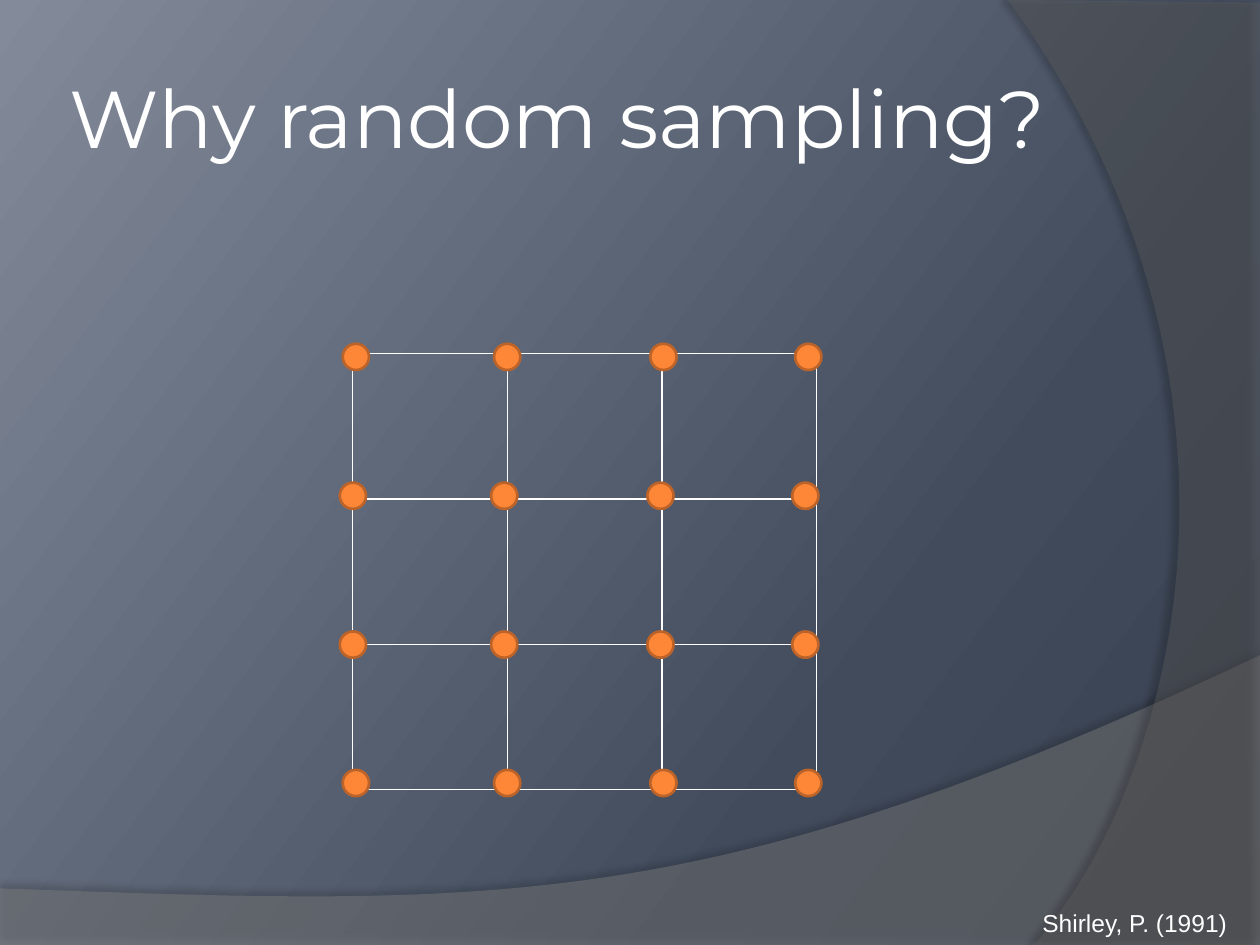
import copy

import lxml.etree
import pptx
import pptx.dml.color
import pptx.enum.shapes
import pptx.enum.text
import pptx.oxml.ns
import pptx.util

Cm = pptx.util.Cm
Pt = pptx.util.Pt
qn = pptx.oxml.ns.qn

COLORS = {
    "night": "373F4D",
    "slate": "414B5C",
    "mist": "838B9A",
    "lower_wave": "7F7F7F",
    "right_wave": "5E5E5E",
    "shadow": "000000",
    "white": "FFFFFF",
    "sample": "FE8637",
    "sample_edge": "BC6329",
}
WIDTH, HEIGHT = 25.4, 19.05


def rgb(name):
    return pptx.dml.color.RGBColor.from_string(COLORS[name])


def add_color(parent, name, opacity=100):
    color = lxml.etree.SubElement(parent, qn("a:srgbClr"), val=COLORS[name])
    if opacity < 100:
        lxml.etree.SubElement(color, qn("a:alpha"), val=str(opacity * 1000))


def write_text(frame, text, size, font, color="white", align="LEFT", anchor="TOP", inset=None):
    frame.word_wrap = True
    frame.auto_size = pptx.enum.text.MSO_AUTO_SIZE.NONE
    frame.vertical_anchor = getattr(pptx.enum.text.MSO_ANCHOR, anchor)
    if inset is not None:
        frame.margin_left = frame.margin_right = Cm(inset)
        frame.margin_top = frame.margin_bottom = Cm(inset)
    paragraph = frame.paragraphs[0]
    paragraph.alignment = getattr(pptx.enum.text.PP_ALIGN, align)
    run = paragraph.add_run()
    run.text = text
    run.font.size = Pt(size)
    run.font.name = font
    run.font.color.rgb = rgb(color)


def paint_background(slide):
    fill = slide.background.fill
    fill.gradient()
    fill.gradient_angle = 143
    first = slide.element.find(".//" + qn("a:gs"))
    first.addnext(copy.deepcopy(first))
    stops = zip(fill.gradient_stops, (0, 0.3, 1), ("night", "slate", "mist"))
    for stop, position, color in stops:
        stop.position = position
        stop.color.rgb = rgb(color)


def bezier(start, control_1, control_2, end, steps=48):
    points = []
    for step in range(1, steps + 1):
        t = step / steps
        weights = ((1 - t) ** 3, 3 * t * (1 - t) ** 2, 3 * t * t * (1 - t), t**3)
        corners = (start, control_1, control_2, end)
        points.append(tuple(sum(w * c[axis] for w, c in zip(weights, corners)) for axis in (0, 1)))
    return points


def add_wave(slide, box, corners, curve, color, opacity, shadow_opacity, distance, direction):
    left, top = box
    outline = corners + bezier(corners[-1], *curve)
    points = [(Cm(left + x), Cm(top + y)) for x, y in outline]
    builder = slide.shapes.build_freeform(*points[0], scale=1.0)
    builder.add_line_segments(points[1:], close=True)
    wave = builder.convert_to_shape()
    wave.fill.solid()
    wave.fill.fore_color.rgb = rgb(color)
    fill_color = wave.element.spPr.find(qn("a:solidFill"))[0]
    lxml.etree.SubElement(fill_color, qn("a:alpha"), val=str(opacity * 1000))
    wave.line.fill.background()
    wave.shadow.inherit = False
    effects = wave.element.spPr.find(qn("a:effectLst"))
    shadow = lxml.etree.SubElement(
        effects, qn("a:outerShdw"), blurRad=str(Pt(4)), dist=str(Pt(distance)),
        dir=str(direction * 60000), algn="ctr", rotWithShape="0",
    )
    add_color(shadow, "shadow", shadow_opacity)


def add_waves(slide):
    add_wave(
        slide, (0, 13.21), [(0, 4.7), (0, 5.84), (WIDTH, 5.84), (WIDTH, 0)],
        [(14.2, 5.31), (9.93, 5.05), (0, 4.7)], "lower_wave", 45, 35, 3.5, 270,
    )
    add_wave(
        slide, (20.32, 0), [(5.08, 0.05), (5.08, HEIGHT), (0.53, HEIGHT)],
        [(3.43, 15.72), (5.54, 7.62), (0, 0)], "right_wave", 40, 45, 4, 180,
    )


def add_title(slide, left, top, width, height):
    title = slide.shapes.title
    title.left, title.top, title.width, title.height = map(Cm, (left, top, width, height))
    write_text(
        title.text_frame, "Why random sampling?", size=46, font="Montserrat",
        anchor="MIDDLE", inset=0.13,
    )
    title.element.getparent().append(title.element)


def add_borders(cell, color, width):
    properties = cell._tc.get_or_add_tcPr()
    for side in ("lnL", "lnR", "lnT", "lnB"):
        line = lxml.etree.SubElement(properties, qn("a:" + side), w=str(Pt(width)))
        add_color(lxml.etree.SubElement(line, qn("a:solidFill")), color)


def add_pixel_grid(slide, left, top, width, height, count=3):
    grid = slide.shapes.add_table(
        count, count, Cm(left), Cm(top), Cm(width), Cm(height)
    ).table
    grid.first_row = grid.horz_banding = False
    for cell in grid.iter_cells():
        add_borders(cell, "white", 1)
        cell.fill.background()


def add_samples(slide, left, top, diameter=0.53):
    columns = (0.06, 3.11, 6.26, 9.18)
    rows = ((0, 0), (2.8, -0.06), (5.8, -0.06), (8.59, 0))
    for y, shift in rows:
        for x in columns:
            sample = slide.shapes.add_shape(
                pptx.enum.shapes.MSO_SHAPE.OVAL,
                Cm(left + x + shift), Cm(top + y), Cm(diameter), Cm(diameter),
            )
            sample.shadow.inherit = False
            sample.fill.solid()
            sample.fill.fore_color.rgb = rgb("sample")
            sample.line.color.rgb = rgb("sample_edge")
            sample.line.width = Pt(1.5)


def add_citation(slide, left, top, width, height):
    citation = slide.shapes.add_textbox(Cm(left), Cm(top), Cm(width), Cm(height))
    write_text(citation.text_frame, "Shirley, P. (1991)", size=14, font="Arial", align="RIGHT")


def main():
    deck = pptx.Presentation()
    deck.slide_width, deck.slide_height = Cm(WIDTH), Cm(HEIGHT)
    slide = deck.slides.add_slide(deck.slide_layouts[5])
    paint_background(slide)
    add_waves(slide)
    add_title(slide, 1.27, 0.76, 23.04, 3.18)
    add_pixel_grid(slide, 7.11, 7.13, 9.35, 8.79)
    add_samples(slide, 6.85, 6.93)
    add_citation(slide, 13.69, 18.19, 11.3, 0.86)
    deck.save("out.pptx")


if __name__ == "__main__":
    main()
